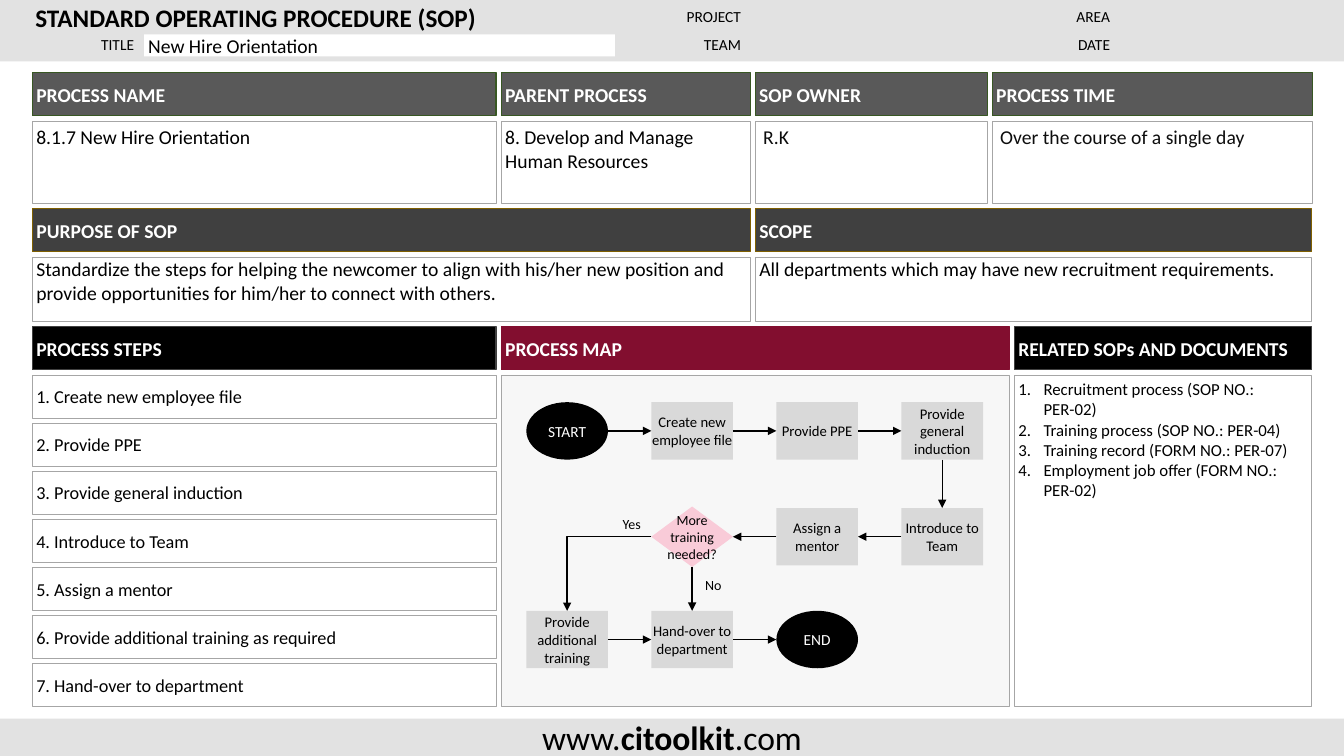
"""Builds a one-page standard operating procedure slide."""
from lxml import etree
from pptx import Presentation
from pptx import util as u
from pptx.dml.color import RGBColor
from pptx.enum import shapes, text
from pptx.oxml.ns import qn

COLORS = {
    "black": "000000", "ink": "0D0D0D", "white": "FFFFFF", "band": "E2E2E2",
    "gray": "595959", "dark": "404040", "border": "A6A6A6", "node": "D9D9D9",
    "green": "385723", "gold": "806000", "crimson": "820E2F", "pink": "F9CBD8",
}
FONT = "Calibri"
GAP = 0.05
HEADER_HEIGHT = 0.43
INSET = 0.04
SHAPE, ALIGN, ANCHOR = shapes.MSO_SHAPE, text.PP_ALIGN, text.MSO_ANCHOR
TOP, LEFT, BOTTOM, RIGHT = range(4)


def color(name):
    """Return the named colour."""
    return RGBColor.from_string(COLORS[name])


def style(paragraph, size, ink="black", bold=False, align=ALIGN.LEFT):
    """Set the look of a whole paragraph."""
    paragraph.alignment = align
    font = paragraph.font
    font.name, font.size, font.bold = FONT, u.Pt(size), bold
    font.color.rgb = color(ink)


def frame(shape, anchor=ANCHOR.MIDDLE, insets=(INSET,) * 4, wrap=True):
    """Prepare the text frame of a shape and return it."""
    text_frame = shape.text_frame
    text_frame.word_wrap, text_frame.vertical_anchor = wrap, anchor
    (text_frame.margin_left, text_frame.margin_top,
     text_frame.margin_right, text_frame.margin_bottom) = map(u.Inches, insets)
    return text_frame


def write(shape, words, size, ink="black", bold=False, align=ALIGN.LEFT, **layout):
    """Put one paragraph of text into a shape."""
    text_frame = frame(shape, **layout)
    text_frame.text = words
    style(text_frame.paragraphs[0], size, ink, bold, align)


def block(slide, box, fill, line=None, weight=0.75, opacity=None, kind=SHAPE.RECTANGLE):
    """Draw a filled shape with an optional outline."""
    shape = slide.shapes.add_shape(kind, *map(u.Inches, box))
    shape.shadow.inherit = False
    shape.fill.solid()
    shape.fill.fore_color.rgb = color(fill)
    if opacity:
        paint = shape.element.spPr.find(qn("a:solidFill"))[0]
        etree.SubElement(paint, qn("a:alpha"), val=str(opacity * 1000))
    if line:
        shape.line.color.rgb = color(line)
        shape.line.width = u.Pt(weight)
    else:
        shape.line.fill.background()
    return shape


def label(slide, box, words, size, **options):
    """Add a text box with one paragraph."""
    write(slide.shapes.add_textbox(*map(u.Inches, box)), words, size, **options)


def banner(slide, box):
    """Draw the top band with the heading, title and field names."""
    left, top, width, height = box
    block(slide, box, "band")
    label(slide, (left + 0.31, top, 5.79, 0.34),
          "STANDARD OPERATING PROCEDURE (SOP)", 18, bold=True)
    fields = [("TITLE", 0.15, 0.33, 1.22), ("PROJECT", 6.25, 0.05, 1.14),
              ("TEAM", 6.25, 0.33, 1.14), ("AREA", 10.24, 0.05, 0.81),
              ("DATE", 10.24, 0.33, 0.81)]
    for words, x, y, field_width in fields:
        label(slide, (left + x, top + y, field_width, 0.23), words, 11, align=ALIGN.RIGHT)
    title = block(slide, (left + 1.43, top + 0.34, 4.67, 0.22), "white")
    write(title, "New Hire Orientation", 14)


def footer(slide, box):
    """Draw the bottom band with the web address."""
    paragraph = frame(block(slide, box, "band"), insets=(0,) * 4).paragraphs[0]
    style(paragraph, 24, align=ALIGN.CENTER)
    for words, bold in [("www.", False), ("citoolkit", True), (".com", False)]:
        run = paragraph.add_run()
        run.text, run.font.bold = words, bold


def header(slide, box, title, fill, line):
    """Draw a panel header and return the box left below it."""
    left, top, width, height = box
    bar = block(slide, (left, top, width, HEADER_HEIGHT), fill, line)
    write(bar, title, 14, "white", True)
    used = HEADER_HEIGHT + GAP
    return left, top + used, width, height - used


def text_panel(slide, box, title, words, fill, line, ink="black", insets=(INSET,) * 4):
    """Draw a header with a box of text below it."""
    body = block(slide, header(slide, box, title, fill, line), "white", "border", 0.5)
    write(body, words, 14, ink, anchor=ANCHOR.TOP, insets=insets)


def steps_panel(slide, box, steps):
    """Draw the numbered process steps at an even pitch."""
    left, top, width, height = header(slide, box, "PROCESS STEPS", "black", "dark")
    pitch = (height - HEADER_HEIGHT) / (len(steps) - 1)
    for index, step in enumerate(steps):
        row = block(slide, (left, top + index * pitch, width, HEADER_HEIGHT),
                    "white", "border", 0.5, 20)
        write(row, f"{index + 1}. {step}", 13)


def documents_panel(slide, box, documents):
    """Draw the numbered list of related documents."""
    body_box = header(slide, box, "RELATED SOPs AND DOCUMENTS", "black", "dark")
    text_frame = frame(block(slide, body_box, "white", "border", 0.5, 20), ANCHOR.TOP)
    text_frame.text = "\n".join(documents)
    for paragraph in text_frame.paragraphs:
        properties = paragraph._p.get_or_add_pPr()
        properties.set("marL", str(u.Inches(0.25)))
        properties.set("indent", str(u.Inches(-0.25)))
        etree.SubElement(properties, qn("a:buAutoNum"), type="arabicPeriod")
        style(paragraph, 12)


def arrow(slide, start, end, kind=shapes.MSO_CONNECTOR.STRAIGHT):
    """Draw a black connector with an arrowhead at its end."""
    connector = slide.shapes.add_connector(kind, *map(u.Inches, start + end))
    connector.line.color.rgb = color("black")
    connector.line.width = u.Pt(1)
    etree.SubElement(connector.line._get_or_add_ln(), qn("a:tailEnd"), type="triangle")
    etree.SubElement(connector.element.spPr, qn("a:effectLst"))
    return connector


def map_panel(slide, box):
    """Draw the process map as a flow chart on a grid."""
    body = header(slide, box, "PROCESS MAP", "crimson", "crimson")
    block(slide, body, "node", "border", 0.5, 20)
    left, top = body[:2]
    width, height, pitch = 0.81, 0.57, 1.24
    rows = [0.27, 1.32, 2.34]
    oval, process, decision = SHAPE.OVAL, SHAPE.RECTANGLE, SHAPE.DIAMOND
    looks = {oval: ("black", "white", 11, height), process: ("node", "black", 10.5, height),
             decision: ("pink", "black", 10, 0.6)}
    nodes = {
        "start": (0, 0, oval, "START"), "file": (1, 0, process, "Create new employee file"),
        "equipment": (2, 0, process, "Provide PPE"),
        "induction": (3, 0, process, "Provide general induction"),
        "team": (3, 1, process, "Introduce to Team"),
        "mentor": (2, 1, process, "Assign a mentor"),
        "decision": (1, 1, decision, "More\vtraining\vneeded?"),
        "training": (0, 2, process, "Provide additional training"),
        "handover": (1, 2, process, "Hand-over to department"), "end": (2, 2, oval, "END"),
    }
    drawn, sides = {}, {}
    for name, (column, row, kind, words) in nodes.items():
        fill, ink, size, tall = looks[kind]
        x, middle = left + 0.25 + column * pitch, top + rows[row] + height / 2
        node = block(slide, (x, middle - tall / 2, width, tall), fill, kind=kind)
        write(node, words, size, ink, align=ALIGN.CENTER, insets=(0,) * 4,
              wrap=kind != decision)
        drawn[name] = node
        sides[name] = [(x + width / 2, middle - tall / 2), (x, middle),
                       (x + width / 2, middle + tall / 2), (x + width, middle)]
    links = [("start", RIGHT, "file", LEFT), ("file", RIGHT, "equipment", LEFT),
             ("equipment", RIGHT, "induction", LEFT), ("induction", BOTTOM, "team", TOP),
             ("team", LEFT, "mentor", RIGHT), ("mentor", LEFT, "decision", RIGHT),
             ("decision", BOTTOM, "handover", TOP), ("training", RIGHT, "handover", LEFT),
             ("handover", RIGHT, "end", LEFT)]
    for source, exit_side, target, entry_side in links:
        connector = arrow(slide, sides[source][exit_side], sides[target][entry_side])
        if nodes[source][2] != oval:
            connector.begin_connect(drawn[source], exit_side)
        if nodes[target][2] != oval:
            connector.end_connect(drawn[target], entry_side)
    elbow = arrow(slide, sides["decision"][LEFT], sides["training"][TOP],
                  shapes.MSO_CONNECTOR.ELBOW)
    elbow.element.spPr.find(qn("a:prstGeom")).set("prst", "bentConnector2")
    for words, x, y, label_width in [("Yes", 1.02, 1.34, 0.55), ("No", 1.9, 1.95, 0.41)]:
        label(slide, (left + x, top + y, label_width, 0.27), words, 10, align=ALIGN.CENTER)


def main():
    """Build and save the presentation."""
    presentation = Presentation()
    presentation.slide_width, presentation.slide_height = u.Inches(13.33), u.Inches(7.5)
    slide = presentation.slides.add_slide(presentation.slide_layouts[6])
    banner(slide, (0, 0, 13.33, 0.61))
    footer(slide, (0, 7.13, 13.33, 0.37))
    indented = (0.08, INSET, INSET, INSET)
    for left, width, title, words, ink, insets in [
            (0.32, 4.6, "PROCESS NAME", "8.1.7 New Hire Orientation", "black", (INSET,) * 4),
            (4.97, 2.47, "PARENT PROCESS", "8. Develop and Manage Human Resources",
             "black", (INSET,) * 4),
            (7.49, 2.3, "SOP OWNER", "R.K", "ink", indented),
            (9.84, 3.18, "PROCESS TIME", "Over the course of a single day", "ink", indented)]:
        text_panel(slide, (left, 0.72, width, 1.3), title, words, "gray", "green", ink, insets)
    for left, width, title, words in [
            (0.32, 7.12, "PURPOSE OF SOP",
             "Standardize the steps for helping the newcomer to align with his/her new position "
             "and provide opportunities for him/her to connect with others."),
            (7.49, 5.52, "SCOPE",
             "All departments which may have new recruitment requirements.")]:
        text_panel(slide, (left, 2.07, width, 1.12), title, words, "dark", "gold",
                   insets=(INSET, 0, INSET, 0))
    steps_panel(slide, (0.32, 3.24, 4.6, 3.77), [
        "Create new employee file", "Provide PPE", "Provide general induction",
        "Introduce to Team", "Assign a mentor", "Provide additional training as required",
        "Hand-over to department"])
    map_panel(slide, (4.97, 3.24, 5.04, 3.77))
    documents_panel(slide, (10.06, 3.24, 2.95, 3.77), [
        "Recruitment process (SOP NO.: PER-02)", "Training process (SOP NO.: PER-04)",
        "Training record (FORM NO.: PER-07)", "Employment job offer (FORM NO.: PER-02)"])
    presentation.save("out.pptx")


if __name__ == "__main__":
    main()
